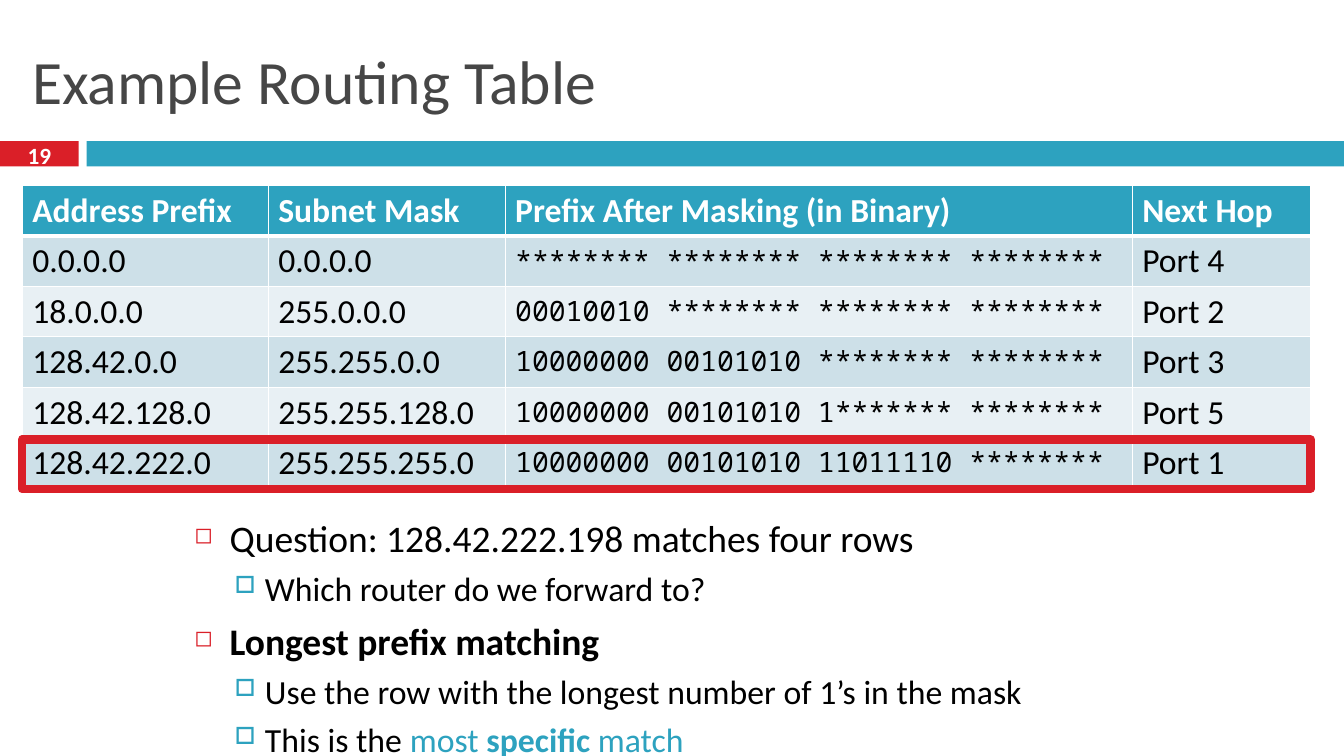
from dataclasses import dataclass, field

from lxml import etree
from pptx import Presentation, util as u
from pptx.dml import color as clr
from pptx.enum import shapes as kinds, text as txt
from pptx.oxml import ns

RED, TEAL, GREY, WHITE, BLACK = "DA1F28", "2DA2BF", "464646", "FFFFFF", "000000"
BANDS = ("CDE0E8", "E8F0F4")
SANS, MONO = "Calibri", "Noto Sans Mono"
LEFT, TOP, WIDTH, ROW = 0.22, 1.84, 12.78, 0.5
COLS = (2.44, 2.35, 6.22, 1.77)
HEADS = ("Address Prefix", "Subnet Mask", "Prefix After Masking (in Binary)", "Next Hop")
ROUTES = (
    ("0.0.0.0", "0.0.0.0", "******** ******** ******** ********", "Port 4"),
    ("18.0.0.0", "255.0.0.0", "00010010 ******** ******** ********", "Port 2"),
    ("128.42.0.0", "255.255.0.0", "10000000 00101010 ******** ********", "Port 3"),
    ("128.42.128.0", "255.255.128.0", "10000000 00101010 1******* ********", "Port 5"),
    ("128.42.222.0", "255.255.255.0", "10000000 00101010 11011110 ********", "Port 1"),
)


@dataclass
class Box:
    left: float
    top: float
    width: float
    height: float

    def place(self) -> list:
        return [u.Inches(n) for n in (self.left, self.top, self.width, self.height)]


@dataclass
class Run:
    text: str
    color: str = BLACK
    bold: bool = False


@dataclass
class Level:
    mark: str
    color: str
    scale: int
    indent: float
    hang: float
    space: float
    size: float


@dataclass
class Point:
    level: Level
    runs: list = field(default_factory=list)


MAIN = Level("◻", RED, 60, 0.35, 0.35, 7, 26.8)
SUB = Level("□", TEAL, 70, 0.7, 0.3, 5.5, 24.1)
POINTS = (
    Point(MAIN, [Run("Question: 128.42.222.198 matches four rows")]),
    Point(SUB, [Run("Which router do we forward to?")]),
    Point(MAIN, [Run("Longest prefix matching", bold=True)]),
    Point(SUB, [Run("Use the row with the longest number of 1’s in the mask")]),
    Point(SUB, [Run("This is the "), Run("most ", TEAL),
                Run("specific", TEAL, True), Run(" match", TEAL)]),
)


def rgb(code: str) -> clr.RGBColor:
    return clr.RGBColor.from_string(code)


def put(item, values: dict) -> None:
    """Set each named attribute of item."""
    for name, value in values.items():
        setattr(item, name, value)


def node(root, tag: str, **attrs):
    """Add a DrawingML child element."""
    return etree.SubElement(root, ns.qn("a:" + tag), attrs)


def add_run(para, run: Run, size: float, face: str = SANS) -> None:
    part = para.add_run()
    part.text = run.text
    put(part.font, {"name": face, "size": u.Pt(size), "bold": run.bold})
    part.font.color.rgb = rgb(run.color)


def add_bar(slide, box: Box, fill: str = "", line: str = "") -> None:
    bar = slide.shapes.add_shape(kinds.MSO_SHAPE.RECTANGLE, *box.place())
    bar.shadow.inherit = False
    if fill:
        bar.fill.solid()
        bar.fill.fore_color.rgb = rgb(fill)
    else:
        bar.fill.background()
    if line:
        bar.line.color.rgb = rgb(line)
        bar.line.width = u.Pt(6)
    else:
        bar.line.fill.background()


def add_text(slide, box: Box, anchor=txt.MSO_ANCHOR.MIDDLE):
    frame = slide.shapes.add_textbox(*box.place()).text_frame
    put(frame, {"word_wrap": True, "vertical_anchor": anchor})
    return frame


def fill_cell(cell, run: Run, fill: str, base: float, size: float, face: str) -> None:
    """Style one cell; base is the width of its bottom border in points."""
    props = cell._tc.get_or_add_tcPr()
    for side, width in {"L": 1, "R": 1, "T": 1, "B": base}.items():
        edge = node(props, "ln" + side, w=str(u.Pt(width)))
        node(node(edge, "solidFill"), "srgbClr", val=WHITE)
    cell.fill.solid()
    cell.fill.fore_color.rgb = rgb(fill)
    add_run(cell.text_frame.paragraphs[0], run, size, face)


def add_routes(slide) -> None:
    lines = (HEADS,) + ROUTES
    box = Box(LEFT, TOP, WIDTH, ROW * len(lines))
    grid = slide.shapes.add_table(len(lines), len(COLS), *box.place()).table
    for col, width in zip(grid.columns, COLS):
        col.width = u.Inches(width)
    for y, line in enumerate(lines):
        head = y == 0
        fill = TEAL if head else BANDS[(y - 1) % 2]
        for x, word in enumerate(line):
            code = x == 2 and not head
            run = Run(word, WHITE if head else BLACK, head)
            fill_cell(grid.cell(y, x), run, fill, 3 if head or y == 0 else 1,
                      20 if code else 24, MONO if code else SANS)


def add_points(slide) -> None:
    frame = add_text(slide, Box(1.83, 5.06, 9.83, 2.44), txt.MSO_ANCHOR.TOP)
    for i, point in enumerate(POINTS):
        para = frame.add_paragraph() if i else frame.paragraphs[0]
        level = point.level
        put(para, {"level": int(level is SUB), "space_before": u.Pt(level.space)})
        props = para._p.get_or_add_pPr()
        props.set("marL", str(u.Inches(level.indent)))
        props.set("indent", str(-u.Inches(level.hang)))
        node(node(props, "buClr"), "srgbClr", val=level.color)
        node(props, "buSzPct", val=str(level.scale * 1000))
        node(props, "buChar", char=level.mark)
        for run in point.runs:
            add_run(para, run, level.size)


def main() -> None:
    deck = Presentation()
    put(deck, {"slide_width": u.Inches(13.33), "slide_height": u.Inches(7.5)})
    slide = deck.slides.add_slide(deck.slide_layouts[6])
    add_bar(slide, Box(0, 1.4, 0.78, 0.25), RED)
    add_bar(slide, Box(0.86, 1.4, 12.47, 0.25), TEAL)
    title = add_text(slide, Box(LEFT, 0.25, 12.89, 1.08))
    add_run(title.paragraphs[0], Run("Example Routing Table", GREY), 44)
    number = add_text(slide, Box(0, 1.37, 0.78, 0.33)).paragraphs[0]
    number.alignment = txt.PP_ALIGN.CENTER
    add_run(number, Run("19", WHITE, True), 16.6)
    add_routes(slide)
    add_points(slide)
    add_bar(slide, Box(LEFT, 4.36, WIDTH, 0.49), line=RED)
    deck.save("out.pptx")


if __name__ == "__main__":
    main()
